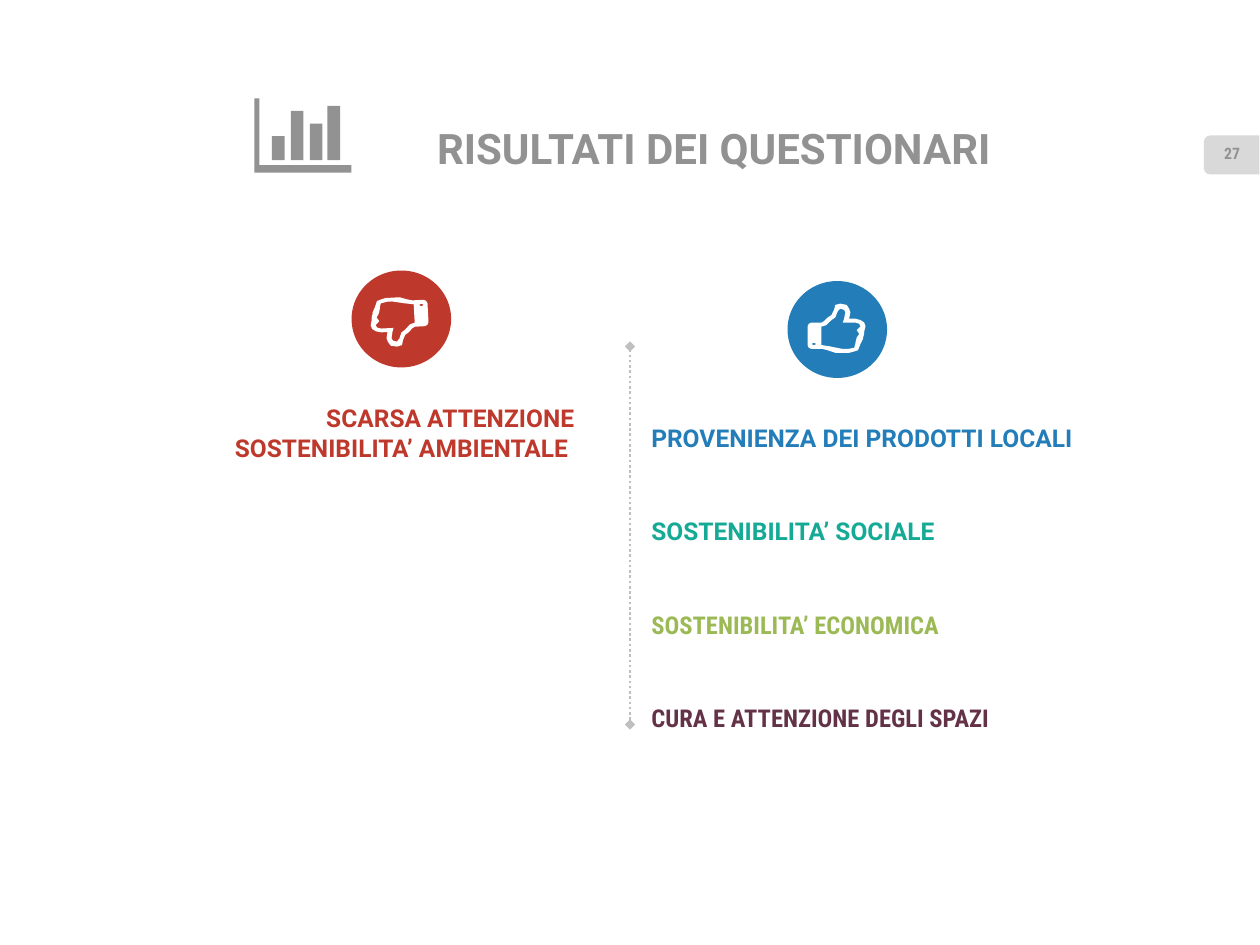
import pptx
import pptx.dml.color
import pptx.enum.dml
import pptx.enum.shapes
import pptx.enum.text
import pptx.oxml.ns
import pptx.util
from lxml import etree

Pt = pptx.util.Pt
Align = pptx.enum.text.PP_ALIGN
AutoSize = pptx.enum.text.MSO_AUTO_SIZE
Shape = pptx.enum.shapes.MSO_SHAPE
qn = pptx.oxml.ns.qn

GREY, RED, BLUE = "929292", "BE382C", "237DB9"
ICON_UNIT = 0.72  # points per unit of the icon outlines below

BAR_BASE = 49
BAR_WIDTH = 10
BARS = [(14, 30), (29, 10), (44, 20), (58, 6)]  # left, top
CHART_ICON = [[(0, 0), (4, 0), (4, 53), (77, 53), (77, 59), (0, 59)]] + [
    [(left, top), (left + BAR_WIDTH, top), (left + BAR_WIDTH, BAR_BASE), (left, BAR_BASE)]
    for left, top in BARS
]

THUMB_ICON = [
    # hand and cuff
    [(45, 22), (45, 24), (44, 27), (44, 28), (42, 32), (40, 37), (37, 38), (33, 39),
     (28, 39), (22, 39), (16, 37), (12, 36), (3, 36), (1, 35), (0, 33), (0, 18), (1, 16),
     (3, 15), (11, 15), (13, 14), (16, 11), (19, 9), (21, 5), (22, 1), (26, 0), (31, 1),
     (33, 4), (34, 7), (33, 12), (38, 12), (42, 13), (45, 15), (46, 18)],
    # button on the cuff
    [(5, 31), (3, 32), (5, 33), (7, 32)],
    # inside of the hand
    [(38, 15), (28, 15), (29, 12), (30, 7), (29, 5), (26, 4), (24, 6), (22, 11), (19, 13),
     (15, 17), (12, 18), (11, 18), (11, 33), (12, 33), (18, 34), (28, 36), (32, 36),
     (37, 35), (38, 32), (38, 31), (39, 27), (41, 24), (39, 21), (42, 18), (41, 16)],
]

STRENGTHS = [
    ("PROVENIENZA DEI PRODOTTI LOCALI", 266.4, "Roboto", BLUE),
    ("SOSTENIBILITA’ SOCIALE", 175.7, "Roboto", "15AA96"),
    ("SOSTENIBILITA’ ECONOMICA", 200.9, "Roboto Condensed", "9BB955"),
    ("CURA E ATTENZIONE DEGLI SPAZI", 238.3, "Roboto Condensed", "633247"),
]


def rgb(value):
    return pptx.dml.color.RGBColor.from_string(value)


class SlideBuilder:
    def __init__(self, presentation):
        self.slide = presentation.slides.add_slide(presentation.slide_layouts[5])
        self.shapes = self.slide.shapes

    def set_text(self, shape, lines, size, font, color, align):
        frame = shape.text_frame
        frame.margin_left = frame.margin_right = frame.margin_top = frame.margin_bottom = 0
        frame.vertical_anchor = pptx.enum.text.MSO_ANCHOR.MIDDLE
        frame.word_wrap = False
        frame.text = "\n".join(lines)
        for paragraph in frame.paragraphs:
            paragraph.alignment = align
            paragraph.font.size = Pt(size)
            paragraph.font.name = font
            paragraph.font.bold = True
            paragraph.font.color.rgb = rgb(color)

    def title(self, text, left, top, width, height):
        title = self.shapes.title
        title.left, title.top, title.width, title.height = map(Pt, (left, top, width, height))
        self.set_text(title, [text], 24, "Roboto", GREY, Align.CENTER)
        title.text_frame.auto_size = AutoSize.NONE

    def text(self, lines, left, top, width, height, color,
             font="Roboto", size=14, align=Align.LEFT):
        box = self.shapes.add_textbox(*map(Pt, (left, top, width, height)))
        self.set_text(box, lines, size, font, color, align)
        box.text_frame.auto_size = AutoSize.SHAPE_TO_FIT_TEXT

    def paint(self, shape, color):
        shape.shadow.inherit = False
        shape.fill.solid()
        shape.fill.fore_color.rgb = rgb(color)
        shape.line.fill.background()

    def preset(self, kind, left, top, width, height, color, rotation=0):
        shape = self.shapes.add_shape(kind, *map(Pt, (left, top, width, height)))
        shape.rotation = rotation
        self.paint(shape, color)

    def icon(self, contours, left, top, color, rotation=0):
        builder = self.shapes.build_freeform(*contours[0][0], scale=Pt(ICON_UNIT))
        builder.add_line_segments(contours[0][1:], close=True)
        for contour in contours[1:]:
            builder.move_to(*contour[0])
            builder.add_line_segments(contour[1:], close=True)
        shape = builder.convert_to_shape(Pt(left), Pt(top))
        shape.rotation = rotation
        self.paint(shape, color)

    def thumb_badge(self, left, top, color, icon_left, icon_top, rotation=0):
        self.preset(Shape.OVAL, left, top, 56.9, 55.4, color)
        self.icon(THUMB_ICON, icon_left, icon_top, "FFFFFF", rotation)

    def dotted_divider(self, x, top, bottom):
        connector = self.shapes.add_connector(
            pptx.enum.shapes.MSO_CONNECTOR.STRAIGHT, Pt(x), Pt(bottom), Pt(x), Pt(top))
        connector.line.color.rgb = rgb("BFBFBF")
        connector.line.width = Pt(1.5)
        connector.line.dash_style = pptx.enum.dml.MSO_LINE.ROUND_DOT
        properties = connector.element.spPr
        line = properties.find(qn("a:ln"))
        for end in ("a:headEnd", "a:tailEnd"):
            etree.SubElement(line, qn(end), type="diamond")
        etree.SubElement(properties, qn("a:effectLst"))


def main():
    presentation = pptx.Presentation()
    presentation.slide_width, presentation.slide_height = Pt(720), Pt(540)
    builder = SlideBuilder(presentation)

    builder.title("RISULTATI DEI QUESTIONARI", 185.8, 70.6, 444.2, 28)
    builder.icon(CHART_ICON, 145.4, 56.2, GREY)
    builder.preset(Shape.ROUND_2_SAME_RECTANGLE, 692.6, 72.7, 22.3, 31.7, "D9D9D9", 270)
    builder.text(["27"], 689, 82, 30.2, 11, GREY, "Roboto Condensed", 9, Align.CENTER)

    builder.thumb_badge(200.9, 154.6, RED, 211.7, 169.9, rotation=176.9)
    builder.text(["SCARSA ATTENZIONE", "SOSTENIBILITA’ AMBIENTALE "],
                 120.2, 230.4, 208.1, 33.8, RED, align=Align.RIGHT)

    builder.dotted_divider(360, 198, 414)

    builder.thumb_badge(450, 160.6, BLUE, 461.5, 173.5)
    for row, (label, width, font, color) in enumerate(STRENGTHS):
        builder.text([label], 372.2, 241.2 + 53.5 * row, width, 17.3, color, font)

    presentation.save("out.pptx")


if __name__ == "__main__":
    main()
